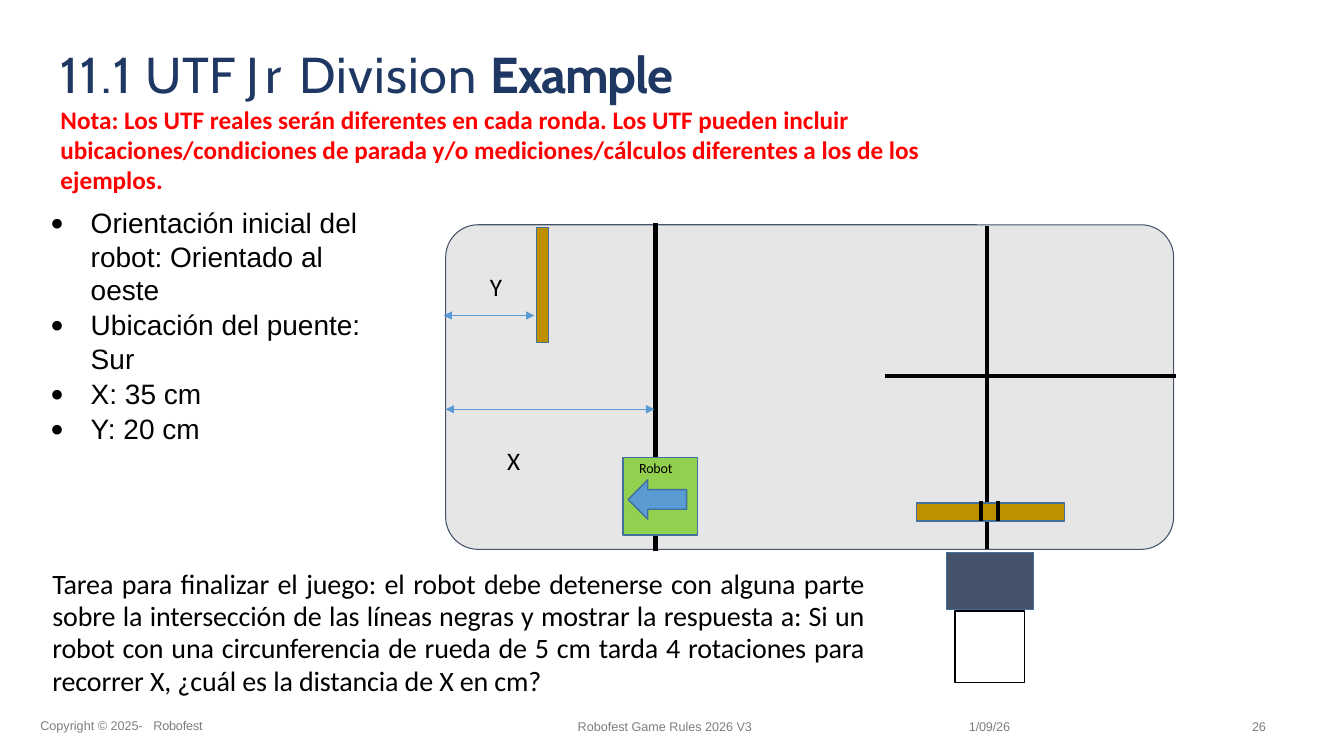
from lxml import etree
from pptx import Presentation
from pptx.dml.color import RGBColor
from pptx.enum import shapes, text
from pptx.oxml import ns
from pptx.util import Inches, Pt

BLACK, BLUE, GOLD, SLATE, GREY = "000000", "5B9BD4", "BE9000", "44536A", "7E7E7E"
EDGE = "41709C"
rgb = RGBColor.from_string


def write(shape, paragraphs, font, size, color, top=0.01, left=0.01):
    """Fill a shape with paragraphs, each a list of (text, letter spacing, bold) runs."""
    frame = shape.text_frame
    frame.word_wrap = True
    frame.auto_size = text.MSO_AUTO_SIZE.NONE
    frame.vertical_anchor = text.MSO_ANCHOR.TOP
    frame.margin_left, frame.margin_top = Inches(left), Inches(top)
    frame.margin_right = frame.margin_bottom = 0
    for index, runs in enumerate(paragraphs):
        para = frame.add_paragraph() if index else frame.paragraphs[0]
        para.alignment = text.PP_ALIGN.LEFT
        for words, spacing, bold in runs:
            span = para.add_run()
            span.text = words
            span.font.name, span.font.size, span.font.bold = font, Pt(size), bold
            span.font.color.rgb = rgb(color)
            span.font._element.set("spc", str(round(spacing * 100)))
    return frame


def add_line(x1, y1, x2, y2, color, width):
    line = page.shapes.add_connector(
        shapes.MSO_CONNECTOR.STRAIGHT, Inches(x1), Inches(y1), Inches(x2), Inches(y2))
    line.line.color.rgb = rgb(color)
    line.line.width = Pt(width)
    etree.SubElement(line._element.spPr, ns.qn("a:effectLst"))
    return line


deck = Presentation()
deck.slide_width, deck.slide_height = Inches(13.33), Inches(7.5)
page = deck.slides.add_slide(deck.slide_layouts[5])

# Title
title = page.shapes.title
title.left, title.top = Inches(0.59), Inches(0.42)
title.width, title.height = Inches(6.52), Inches(0.63)
title_runs = [("11.1", 1.9, False), (" UTF ", 0, False), ("Jr", 4.2, False),
              (" Division ", 0.8, False), ("Example", -0.9, True)]
write(title, [title_runs], "Cabin", 36, "1F3863")

# Playing field, its lines and the objects on it, from back to front
RECT = shapes.MSO_SHAPE.RECTANGLE
field_parts = [
    ("field", shapes.MSO_SHAPE.ROUNDED_RECTANGLE, 4.42, 2.23, 7.22, 3.22, "E7E6E6", SLATE, 0.75),
    ("line", 6.5, 2.21, 6.5, 5.47, 3.84),
    ("wall", RECT, 5.32, 2.26, 0.12, 1.14, GOLD, EDGE, 1),
    ("line", 8.78, 3.73, 11.66, 3.73, 3),
    ("line", 9.79, 2.24, 9.79, 5.45, 3),
    ("dark box", RECT, 9.39, 5.48, 0.86, 0.57, SLATE, EDGE, 1),
    ("white box", RECT, 9.47, 6.06, 0.69, 0.71, None, BLACK, 1),
    ("robot", RECT, 6.18, 4.54, 0.74, 0.77, "92D050", EDGE, 1),
    ("heading", shapes.MSO_SHAPE.LEFT_ARROW, 6.23, 4.76, 0.58, 0.39, BLUE, EDGE, 1),
    ("bridge", RECT, 9.09, 4.99, 1.47, 0.18, GOLD, EDGE, 1),
    ("line", 9.73, 4.97, 9.73, 5.17, 3),
    ("line", 9.9, 4.97, 9.9, 5.17, 3),
]
for kind, *details in field_parts:
    if kind == "line":
        *ends, width = details
        add_line(*ends, BLACK, width)
        continue
    preset, *place, fill, edge, width = details
    part = page.shapes.add_shape(preset, *map(Inches, place))
    part.shadow.inherit = False
    part.line.color.rgb = rgb(edge)
    part.line.width = Pt(width)
    if fill:
        part.fill.solid()
        part.fill.fore_color.rgb = rgb(fill)
    else:
        part.fill.background()
    if kind == "field":
        part.adjustments[0] = 0.1
    elif kind == "robot":
        write(part, [[("Robot", -0.1, False)]], "Calibri", 10, BLACK, top=0.02, left=0.16)

# Measuring arrows
for left, right, y in [(4.4, 5.3, 3.13), (4.42, 6.49, 4.06)]:
    measure = add_line(left, y, right, y, BLUE, 0.5)
    for end in ("headEnd", "tailEnd"):
        etree.SubElement(measure.line._get_or_add_ln(), ns.qn(f"a:{end}"), type="triangle")

# Text boxes
facts = ["Orientación inicial del robot: Orientado al oeste", "Ubicación del puente: Sur",
         "X: 35 cm", "Y: 20 cm"]
note = ("Nota: Los UTF reales serán diferentes en cada ronda. Los UTF pueden incluir "
        "ubicaciones/condiciones de parada y/o mediciones/cálculos diferentes a los de los "
        "ejemplos.")
task = ("Tarea para finalizar el juego: el robot debe detenerse con alguna parte sobre la "
        "intersección de las líneas negras y mostrar la respuesta a: Si un robot con una "
        "circunferencia de rueda de 5 cm tarda 4 rotaciones para recorrer X, ¿cuál es la "
        "distancia de X en cm?")
copyright_runs = [("Copyright © 2025", 0, False), ("- ", 2.5, False), ("Robofest", -0.1, False)]
footer_runs = [("Robofest Game Rules 2026 ", 0, False), ("V3", -0.2, False)]
text_boxes = [
    ("facts", (0.49, 2.03, 3.28, 2.43), [[(fact, 0, False)] for fact in facts],
     "Arial", 20, BLACK, 0.01, 0),
    ("note", (0.59, 1.02, 8.92, 0.92), [[(note, 0, True)]], "Calibri", 18, "FF0000"),
    ("task", (0.51, 5.62, 8.06, 1.38), [[(task, -0.1, False)]], "Calibri", 20, BLACK, 0.02),
    ("Y label", (4.85, 2.68, 0.15, 0.33), [[("Y", -0.5, False)]], "Calibri", 18, BLACK),
    ("X label", (5.02, 4.41, 0.16, 0.33), [[("X", -0.5, False)]], "Calibri", 18, BLACK),
    ("copyright", (0.39, 7.12, 1.65, 0.17), [copyright_runs], "Arial", 9, GREY, 0),
    ("footer", (5.72, 7.13, 1.76, 0.17), [footer_runs], "Arial", 9, GREY, 0),
    ("date", (9.6, 7.13, 0.45, 0.17), [[("1/09/26", -0.1, False)]], "Arial", 9, GREY, 0),
    ("page number", (12.41, 7.13, 0.21, 0.17), [[("26", -0.2, False)]], "Arial", 9, GREY, 0),
]
for kind, place, *content in text_boxes:
    box = page.shapes.add_textbox(*map(Inches, place))
    paras = write(box, *content).paragraphs
    if kind == "task":
        paras[0].alignment = text.PP_ALIGN.JUSTIFY
        paras[0].line_spacing = 0.96
    elif kind == "facts":
        for index, para in enumerate(paras):
            props = para._p.get_or_add_pPr()
            props.set("marL", str(Inches(0.41)))
            props.set("indent", str(Inches(-0.4)))
            etree.SubElement(props, ns.qn("a:buSzPct"), val="80000")
            etree.SubElement(props, ns.qn("a:buFont"), typeface="Arial")
            etree.SubElement(props, ns.qn("a:buChar"), char="●")
            if index:
                para.space_before = Pt(1.1)

deck.save("out.pptx")
